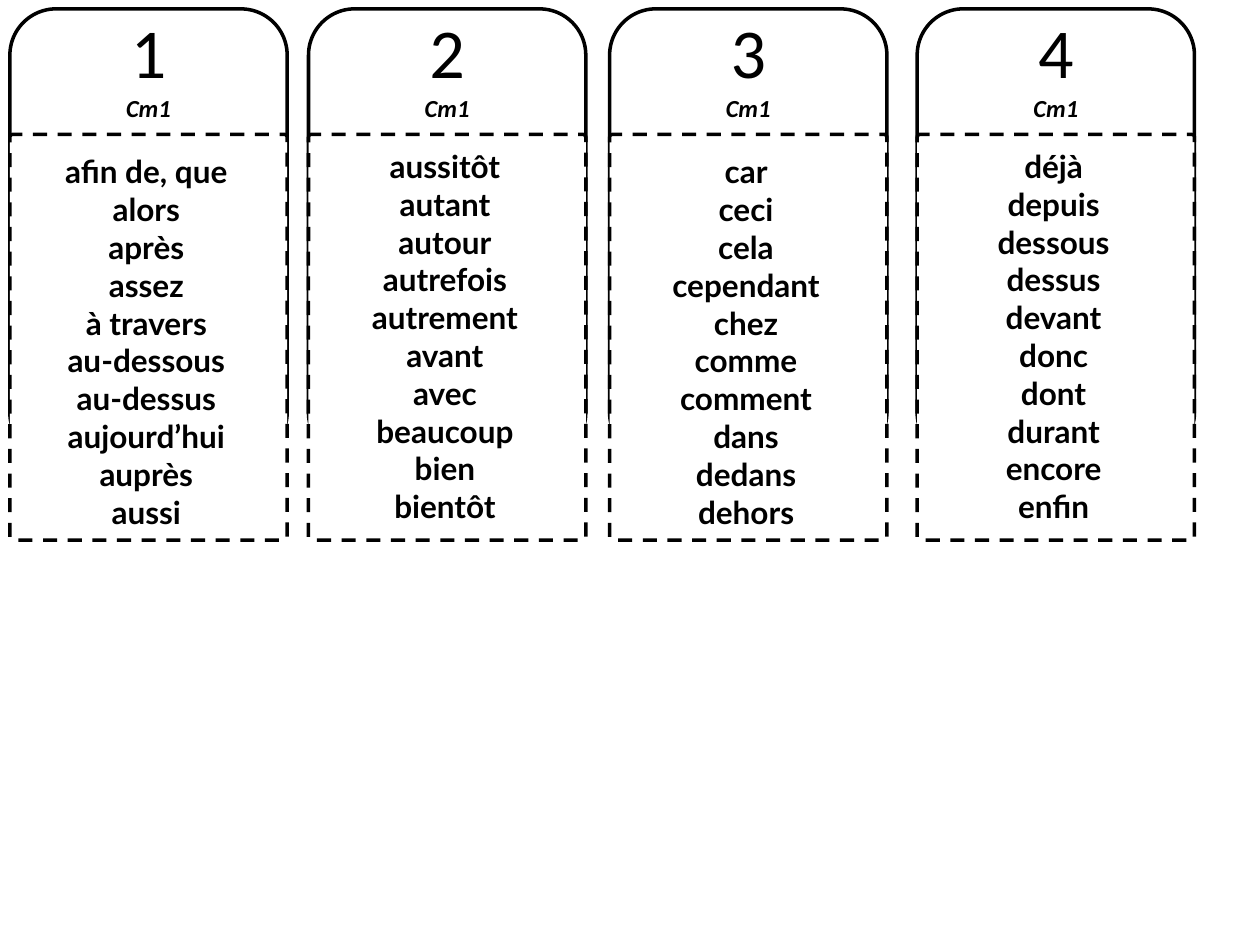
from dataclasses import dataclass

from pptx import Presentation
from pptx.dml.color import RGBColor
from pptx.enum.dml import MSO_LINE
from pptx.enum.shapes import MSO_SHAPE
from pptx.enum.text import MSO_ANCHOR, MSO_AUTO_SIZE, PP_ALIGN
from pptx.util import Cm, Pt


@dataclass(frozen=True)
class Theme:
    ink: RGBColor = RGBColor(0, 0, 0)
    paper: RGBColor = RGBColor(255, 255, 255)
    heading_font: str = "Calibri"
    word_font: str = "Lato"
    number_size: int = 40
    level_size: int = 14
    word_size: int = 18
    line_width: int = 2


CARD_WIDTH = 5.59
CARD_TOP = 0.18
FRAME_HEIGHT = 9.07
PANEL_TOP = 2.71
PANEL_HEIGHT = 8.18
LIST_WIDTH = 4.1
LIST_HEIGHT = 7.95
LIST_OFFSET = 0.7
LEVEL = "Cm1"

CARDS = [
    (0.2, 2.95, ["afin de, que", "alors", "après", "assez", "à travers",
                 "au-dessous", "au-dessus", "aujourd’hui", "auprès", "aussi"]),
    (6.22, 2.84, ["aussitôt", "autant", "autour", "autrefois", "autrement",
                  "avant", "avec", "beaucoup", "bien", "bientôt"]),
    (12.29, 2.95, ["car", "ceci", "cela", "cependant", "chez",
                   "comme", "comment", "dans", "dedans", "dehors"]),
    (18.49, 2.84, ["déjà", "depuis", "dessous", "dessus", "devant",
                   "donc", "dont", "durant", "encore", "enfin"]),
]


def write(paragraph, text, *, font, size, color, bold=False, italic=False):
    paragraph.alignment = PP_ALIGN.CENTER
    run = paragraph.add_run()
    run.text = text
    run.font.name = font
    run.font.size = Pt(size)
    run.font.color.rgb = color
    run.font.bold = bold
    run.font.italic = italic


class CardSheet:
    def __init__(self, slide, theme):
        self.slide = slide
        self.theme = theme

    def outline(self, left, top, height):
        shape = self.slide.shapes.add_shape(
            MSO_SHAPE.ROUNDED_RECTANGLE, Cm(left), Cm(top), Cm(CARD_WIDTH), Cm(height))
        shape.shadow.inherit = False
        shape.fill.background()
        shape.line.color.rgb = self.theme.ink
        shape.line.width = Pt(self.theme.line_width)
        return shape

    def frame(self, left, number):
        theme = self.theme
        text_frame = self.outline(left, CARD_TOP, FRAME_HEIGHT).text_frame
        text_frame.vertical_anchor = MSO_ANCHOR.TOP
        text_frame.margin_top = Cm(-0.27)
        write(text_frame.paragraphs[0], str(number), font=theme.heading_font,
              size=theme.number_size, color=theme.ink)
        write(text_frame.add_paragraph(), LEVEL, font=theme.heading_font,
              size=theme.level_size, color=theme.ink, bold=True, italic=True)

    def panel(self, left):
        shape = self.outline(left, PANEL_TOP, PANEL_HEIGHT)
        shape.adjustments[0] = 0.01
        shape.fill.solid()
        shape.fill.fore_color.rgb = self.theme.paper
        shape.line.dash_style = MSO_LINE.DASH

    def word_list(self, left, top, words):
        theme = self.theme
        box = self.slide.shapes.add_textbox(
            Cm(left), Cm(top), Cm(LIST_WIDTH), Cm(LIST_HEIGHT))
        text_frame = box.text_frame
        text_frame.word_wrap = True
        text_frame.auto_size = MSO_AUTO_SIZE.SHAPE_TO_FIT_TEXT
        for index, word in enumerate(words):
            paragraph = text_frame.add_paragraph() if index else text_frame.paragraphs[0]
            write(paragraph, word, font=theme.word_font, size=theme.word_size,
                  color=theme.ink, bold=True)


def main():
    presentation = Presentation()
    presentation.slide_width = Cm(25.4)
    presentation.slide_height = Cm(19.05)
    slide = presentation.slides.add_slide(presentation.slide_layouts[6])
    sheet = CardSheet(slide, Theme())
    for number, (left, list_top, words) in enumerate(CARDS, start=1):
        sheet.frame(left, number)
        sheet.panel(left)
        sheet.word_list(left + LIST_OFFSET, list_top, words)
    presentation.save("out.pptx")


if __name__ == "__main__":
    main()
